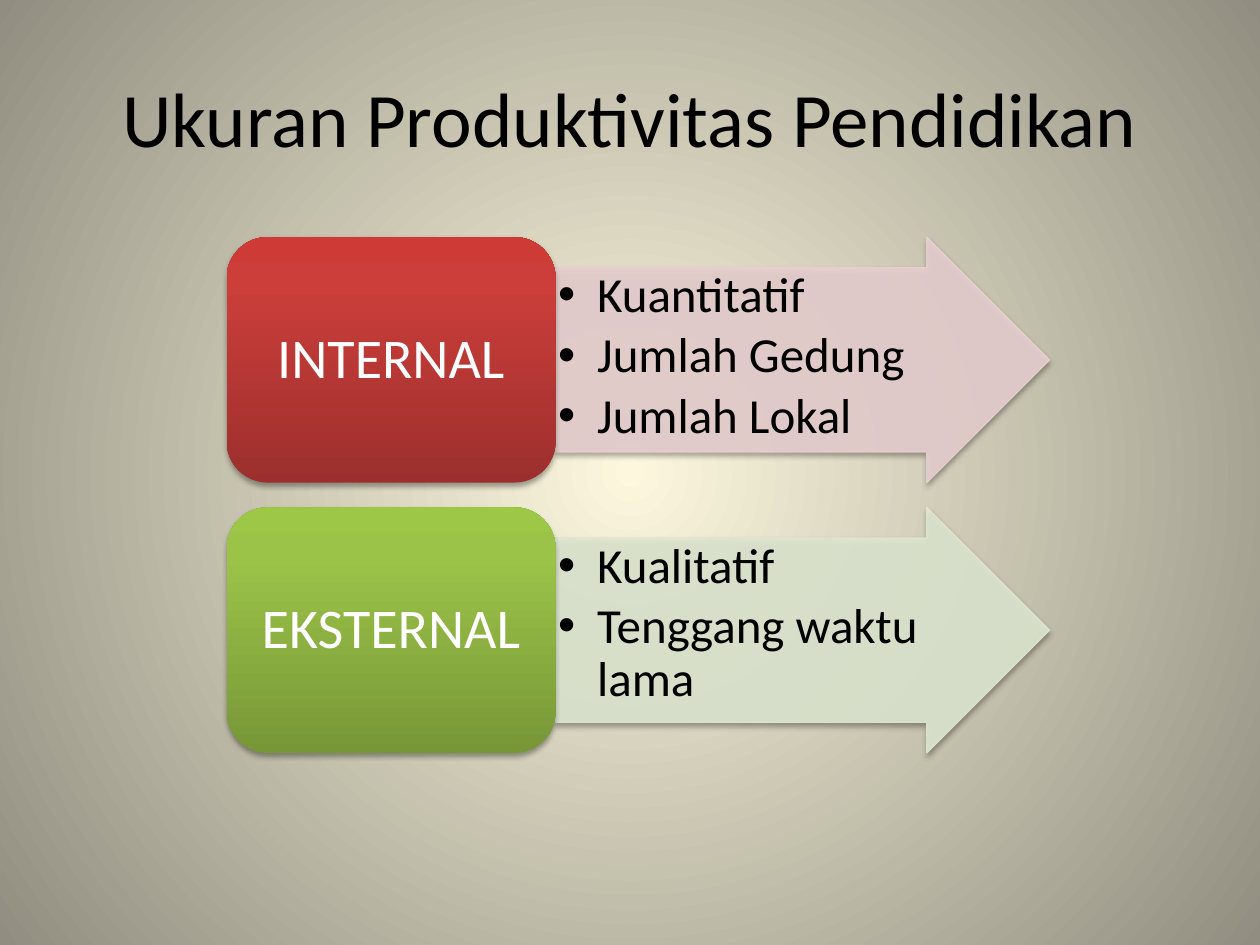
from dataclasses import dataclass

from lxml import etree
from pptx import Presentation
from pptx import util as u
from pptx.dml import color
from pptx.enum import shapes, text
from pptx.oxml import ns


@dataclass(frozen=True)
class Theme:
    font: str = "Calibri"
    dark: str = "000000"
    light: str = "FFFFFF"
    background: tuple = ((0, "FCF7DD"), (100, "918E81"))
    title_size: int = 44
    label_size: int = 32
    bullet_size: int = 28


THEME = Theme()

ROWS = (
    {
        "label": "INTERNAL",
        "points": ("Kuantitatif", "Jumlah Gedung", "Jumlah Lokal"),
        "arrow": "E8D0D0",
        "box": ((0, "9C2F2D"), (80, "CB3E3A"), (100, "CE3B37")),
    },
    {
        "label": "EKSTERNAL",
        "points": ("Kualitatif", "Tenggang waktu lama"),
        "arrow": "DEE7D1",
        "box": ((0, "779737"), (80, "9BC348"), (100, "9DC746")),
    },
)

FIRST_TOP, ROW_PITCH, ROW_HEIGHT = 4.78, 5.45, 4.95
BOX_LEFT, BOX_WIDTH, BOX_PADDING = 4.57, 6.63, 0.24
ARROW_LEFT, ARROW_WIDTH = BOX_LEFT + BOX_WIDTH, 9.96
SHAFT = 0.75


def apply(target, values):
    for name, value in values.items():
        setattr(target, name, value)


def child(parent, tag, **attributes):
    element = etree.SubElement(parent, ns.qn(tag))
    for name, value in attributes.items():
        element.set(name, str(value))
    return element


def set_gradient(fill, owner, stops, angle=None):
    """Fill with a linear gradient, or a circular one when no angle is given."""
    fill.solid()
    solid = next(owner.iter(ns.qn("a:solidFill")))
    gradient = solid.makeelement(ns.qn("a:gradFill"), {"rotWithShape": "1"})
    stop_list = child(gradient, "a:gsLst")
    for position, rgb in stops:
        stop = child(stop_list, "a:gs", pos=position * 1000)
        child(stop, "a:srgbClr", val=rgb)
    if angle is None:
        circle = child(gradient, "a:path", path="circle")
        child(circle, "a:fillToRect", l=50000, t=50000, r=50000, b=50000)
    else:
        child(gradient, "a:lin", ang=angle * 60000, scaled=0)
    solid.getparent().replace(solid, gradient)


def add_shadow(shape):
    shape.shadow.inherit = False
    effects = shape.element.spPr.find(ns.qn("a:effectLst"))
    shadow = child(effects, "a:outerShdw", blurRad=u.Pt(3.1), dist=u.Pt(1.8),
                   dir=90 * 60000, rotWithShape=0)
    child(child(shadow, "a:srgbClr", val="000000"), "a:alpha", val=35000)


def add_bullet(paragraph):
    properties = paragraph._p.get_or_add_pPr()
    apply_indent = {"marL": u.Cm(0.79), "indent": -u.Cm(0.79), "lvl": 1}
    for name, value in apply_indent.items():
        properties.set(name, str(int(value)))
    child(properties, "a:buFont", typeface="Arial")
    child(properties, "a:buChar", char="•")


def add_text(slide, place, lines, size, rgb, paragraph_format, insets=(0.25, 0.13),
             anchor=text.MSO_ANCHOR.MIDDLE, bulleted=False):
    box = slide.shapes.add_textbox(*map(u.Cm, place))
    across, down = map(u.Cm, insets)
    frame = box.text_frame
    apply(frame, {
        "text": "\n".join(lines), "word_wrap": True, "vertical_anchor": anchor,
        "margin_left": across, "margin_right": across,
        "margin_top": down, "margin_bottom": down,
    })
    for paragraph in frame.paragraphs:
        apply(paragraph, paragraph_format)
        for run in paragraph.runs:
            apply(run.font, {"name": THEME.font, "size": u.Pt(size)})
            run.font.color.rgb = color.RGBColor.from_string(rgb)
        if bulleted:
            add_bullet(paragraph)


def add_arrow(slide, top, rgb, points):
    arrow = slide.shapes.add_shape(
        shapes.MSO_SHAPE.RIGHT_ARROW,
        *map(u.Cm, (ARROW_LEFT, top, ARROW_WIDTH, ROW_HEIGHT)))
    arrow.adjustments[0], arrow.adjustments[1] = SHAFT, 0.5
    arrow.line.width = u.Pt(0.75)
    for fill in (arrow.fill, arrow.line.fill):
        fill.solid()
        fill.fore_color.rgb = color.RGBColor.from_string(rgb)
    for tint in arrow.element.spPr.iter(ns.qn("a:srgbClr")):
        child(tint, "a:alpha", val=90000)
    add_shadow(arrow)

    shaft_top = top + ROW_HEIGHT * (1 - SHAFT) / 2
    add_text(slide, (ARROW_LEFT, shaft_top, 8.1, ROW_HEIGHT * SHAFT), points,
             THEME.bullet_size, THEME.dark,
             {"line_spacing": 0.9, "space_after": u.Pt(THEME.bullet_size * 0.15)},
             insets=(0.05, 0.05), anchor=text.MSO_ANCHOR.TOP, bulleted=True)


def add_label_box(slide, top, stops, label):
    box = slide.shapes.add_shape(
        shapes.MSO_SHAPE.ROUNDED_RECTANGLE,
        *map(u.Cm, (BOX_LEFT, top, BOX_WIDTH, ROW_HEIGHT)))
    set_gradient(box.fill, box.element.spPr, stops, angle=270)
    box.line.fill.background()
    add_shadow(box)
    add_text(slide,
             (BOX_LEFT + BOX_PADDING, top + BOX_PADDING,
              BOX_WIDTH - 2 * BOX_PADDING, ROW_HEIGHT - 2 * BOX_PADDING),
             [label], THEME.label_size, THEME.light,
             {"alignment": text.PP_ALIGN.CENTER, "line_spacing": 0.9},
             insets=(0.33, 0.18))


def main():
    presentation = Presentation()
    apply(presentation, {"slide_width": u.Cm(25.4), "slide_height": u.Cm(19.05)})
    slide = presentation.slides.add_slide(presentation.slide_layouts[6])
    set_gradient(slide.background.fill, slide.element, THEME.background)
    add_text(slide, (1.27, 0.76, 22.86, 3.18), ["Ukuran Produktivitas Pendidikan"],
             THEME.title_size, THEME.dark, {"alignment": text.PP_ALIGN.CENTER})
    for index, row in enumerate(ROWS):
        top = FIRST_TOP + index * ROW_PITCH
        add_arrow(slide, top, row["arrow"], row["points"])
        add_label_box(slide, top, row["box"], row["label"])
    presentation.save("out.pptx")


if __name__ == "__main__":
    main()
